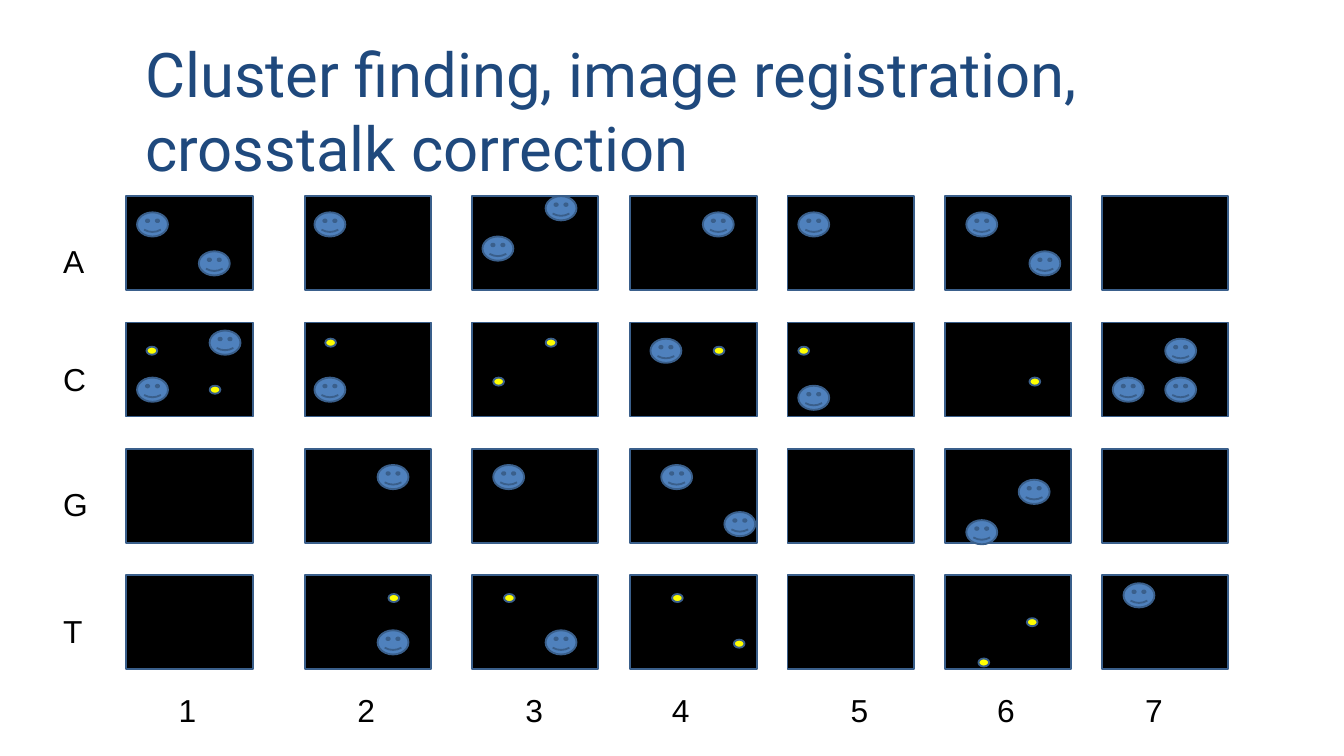
from pptx import Presentation
from pptx.dml.color import RGBColor
from pptx.enum.shapes import MSO_SHAPE
from pptx.enum.text import MSO_ANCHOR, MSO_AUTO_SIZE, PP_ALIGN
from pptx.util import Inches, Pt

RECTANGLE, FACE, DOT = MSO_SHAPE.RECTANGLE, MSO_SHAPE.SMILEY_FACE, MSO_SHAPE.OVAL
TOP, LEFT, NO_FIT = MSO_ANCHOR.TOP, PP_ALIGN.LEFT, MSO_AUTO_SIZE.NONE

THEME = {
    "title_font": "Roboto", "title_size": 33, "title": "1F497D",
    "label_font": "Arial", "label_size": 17, "label": "000000",
    "tile": "000000", "face": "4F81BD", "dot": "FFFF00",
    "line": "3A5F8B", "line_width": 1,
}

TITLE = "Cluster finding, image registration, crosstalk correction"
BASES = [("A", 1.76), ("C", 2.64), ("G", 3.57), ("T", 4.51)]
CYCLES = [
    ("1", 0.94, 1.25), ("2", 2.27, 2.58), ("3", 3.51, 3.83), ("4", 4.69, 4.92),
    ("5", 5.86, 6.25), ("6", 7.03, 7.34), ("7", 8.2, 8.44),
]

FACES = {
    "A1": [(0.08, 0.12), (0.54, 0.41)],
    "A2": [(0.07, 0.12)],
    "A3": [(0.55, 0), (0.08, 0.3)],
    "A4": [(0.54, 0.12)],
    "A5": [(0.08, 0.12)],
    "A6": [(0.16, 0.12), (0.63, 0.41)],
    "C1": [(0.62, 0.06), (0.08, 0.41)],
    "C2": [(0.07, 0.41)],
    "C4": [(0.15, 0.12)],
    "C5": [(0.08, 0.47)],
    "C7": [(0.47, 0.12), (0.08, 0.41), (0.47, 0.41)],
    "G2": [(0.54, 0.12)],
    "G3": [(0.16, 0.12)],
    "G4": [(0.7, 0.47), (0.23, 0.12)],
    "G6": [(0.55, 0.23), (0.16, 0.53)],
    "T2": [(0.54, 0.41)],
    "T3": [(0.55, 0.41)],
    "T7": [(0.16, 0.06)],
}
DOTS = {
    "C1": [(0.62, 0.47), (0.15, 0.18)],
    "C2": [(0.15, 0.12)],
    "C3": [(0.55, 0.12), (0.16, 0.41)],
    "C4": [(0.62, 0.18)],
    "C5": [(0.08, 0.18)],
    "C6": [(0.63, 0.41)],
    "T2": [(0.62, 0.14)],
    "T3": [(0.24, 0.14)],
    "T4": [(0.31, 0.14), (0.77, 0.48)],
    "T6": [(0.61, 0.32), (0.25, 0.62)],
}

FIRST_ROW, ROW_PITCH = 1.46, 0.94
TILE_SIZE, FACE_SIZE, DOT_SIZE = (0.94, 0.7), (0.23, 0.18), (0.08, 0.06)
BASE_LEFT, CYCLE_TOP, LABEL_SIZE = 0.39, 5.1, (0.47, 0.3)


def write(box, text, font, size, color):
    frame = box.text_frame
    frame.word_wrap = True
    frame.auto_size = NO_FIT
    frame.vertical_anchor = TOP
    frame.margin_left = frame.margin_right = Inches(0.08)
    frame.margin_top = frame.margin_bottom = Inches(0.04)
    para = frame.paragraphs[0]
    para.alignment = LEFT
    span = para.add_run()
    span.text = text
    span.font.name = font
    span.font.size = Pt(size)
    span.font.color.rgb = RGBColor.from_string(color)


def add_label(page, text, left, top):
    box = page.shapes.add_textbox(*map(Inches, (left, top, *LABEL_SIZE)))
    write(box, text, font=THEME["label_font"], size=THEME["label_size"], color=THEME["label"])


def add_mark(page, kind, left, top, size, color):
    mark = page.shapes.add_shape(kind, *map(Inches, (left, top, *size)))
    mark.shadow.inherit = False
    mark.fill.solid()
    mark.fill.fore_color.rgb = RGBColor.from_string(color)
    mark.line.color.rgb = RGBColor.from_string(THEME["line"])
    mark.line.width = Pt(THEME["line_width"])


def main():
    deck = Presentation()
    deck.slide_width = Inches(10)
    deck.slide_height = Inches(10) * 9 // 16
    page = deck.slides.add_slide(deck.slide_layouts[5])

    title = page.shapes.title
    title.left, title.top, title.width, title.height = map(Inches, (1, 0.23, 8.5, 0.94))
    write(title, TITLE, font=THEME["title_font"], size=THEME["title_size"], color=THEME["title"])

    for row, (base, label_top) in enumerate(BASES):
        top = FIRST_ROW + row * ROW_PITCH
        add_label(page, base, BASE_LEFT, label_top)
        for cycle, left, _ in CYCLES:
            add_mark(page, RECTANGLE, left, top, TILE_SIZE, THEME["tile"])
            for x, y in FACES.get(base + cycle, []):
                add_mark(page, FACE, left + x, top + y, FACE_SIZE, THEME["face"])
            for x, y in DOTS.get(base + cycle, []):
                add_mark(page, DOT, left + x, top + y, DOT_SIZE, THEME["dot"])

    for cycle, _, label_left in CYCLES:
        add_label(page, cycle, label_left, CYCLE_TOP)

    deck.save("out.pptx")


if __name__ == "__main__":
    main()
